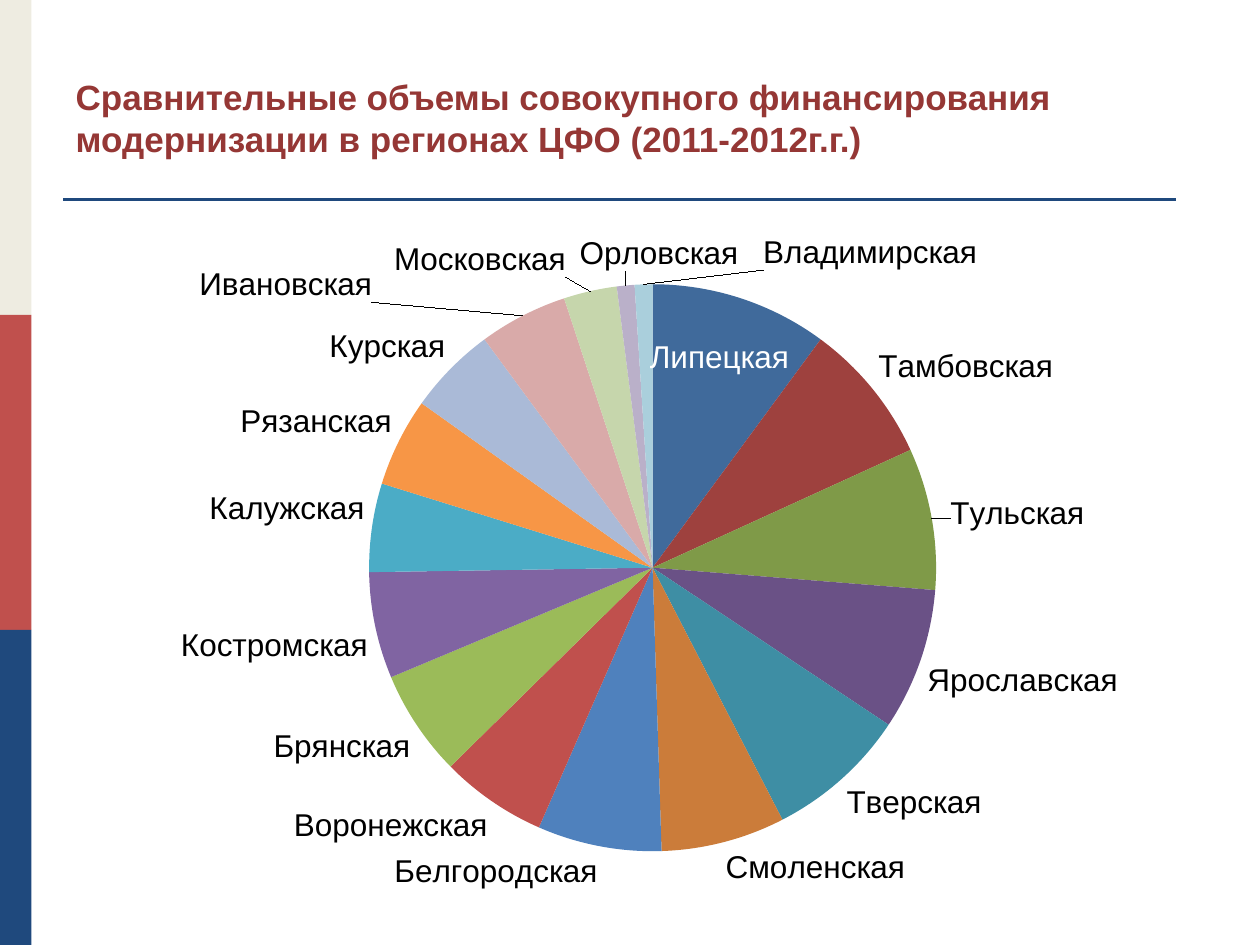
from dataclasses import dataclass
from typing import NamedTuple

from lxml import etree
from pptx import Presentation
from pptx.chart.data import CategoryChartData
from pptx.dml.color import RGBColor
from pptx.enum.chart import XL_CHART_TYPE, XL_LABEL_POSITION
from pptx.enum.shapes import MSO_CONNECTOR, MSO_SHAPE
from pptx.enum.text import MSO_ANCHOR, MSO_AUTO_SIZE, PP_ALIGN
from pptx.oxml.ns import qn
from pptx.util import Pt

PIE = XL_CHART_TYPE.PIE
OUTSIDE_END = XL_LABEL_POSITION.OUTSIDE_END
CENTER = XL_LABEL_POSITION.CENTER
STRAIGHT = MSO_CONNECTOR.STRAIGHT
RECTANGLE = MSO_SHAPE.RECTANGLE
BOTTOM = MSO_ANCHOR.BOTTOM
NO_AUTOFIT = MSO_AUTO_SIZE.NONE
LEFT = PP_ALIGN.LEFT
TITLE_ONLY = 5


@dataclass(frozen=True)
class Theme:
    font: str = "Arial"
    title_size: float = 20
    label_size: float = 18
    title: str = "953735"
    label: str = "000000"
    inside_label: str = "FFFFFF"
    rule: str = "1F497D"
    bands: tuple[str, ...] = ("EEECE1", "C0504D", "1F497D")


class Region(NamedTuple):
    name: str
    value: int
    color: str


class LabelShift(NamedTuple):
    x: float
    y: float


THEME = Theme()
TITLE = (
    "Сравнительные объемы совокупного финансирования "
    "модернизации в регионах ЦФО (2011-2012г.г.)"
)
REGIONS = (
    Region("Липецкая", 10, "406A9B"),
    Region("Тамбовская", 8, "9E413E"),
    Region("Тульская", 8, "7F9A48"),
    Region("Ярославская", 8, "6A5186"),
    Region("Тверская", 8, "3E8EA4"),
    Region("Смоленская", 7, "CB7C3A"),
    Region("Белгородская", 7, "4F81BD"),
    Region("Воронежская", 6, "C0504D"),
    Region("Брянская", 6, "9BBB59"),
    Region("Костромская", 6, "8064A2"),
    Region("Калужская", 5, "4BACC6"),
    Region("Рязанская", 5, "F79646"),
    Region("Курская", 5, "AABAD7"),
    Region("Ивановская", 5, "D9AAA9"),
    Region("Московская", 3, "C6D6AC"),
    Region("Орловская", 1, "BAB0C9"),
    Region("Владимирская", 1, "AACFDC"),
)
INSIDE_REGION = "Липецкая"
LABEL_SHIFTS = {
    "Липецкая": LabelShift(0.02, -0.11),
    "Тульская": LabelShift(0.01, 0.02),
    "Ивановская": LabelShift(-0.13, -0.01),
    "Московская": LabelShift(-0.02, -0.01),
    "Орловская": LabelShift(0.1, -0.01),
    "Владимирская": LabelShift(0.2, -0.01),
}


def rgb(color: str) -> RGBColor:
    return RGBColor.from_string(color)


def draw_bands(slide, height: float) -> None:
    band_height = height / len(THEME.bands)
    for index, color in enumerate(THEME.bands):
        band = slide.shapes.add_shape(
            RECTANGLE, Pt(0), Pt(index * band_height), Pt(18), Pt(band_height)
        )
        band.shadow.inherit = False
        band.fill.solid()
        band.fill.fore_color.rgb = rgb(color)
        band.line.fill.background()


def draw_rule(slide) -> None:
    rule = slide.shapes.add_connector(STRAIGHT, Pt(36), Pt(114), Pt(672), Pt(114))
    rule.line.color.rgb = rgb(THEME.rule)
    rule.line.width = Pt(1.5)
    properties = rule._element.find(qn("p:spPr"))
    etree.SubElement(properties, qn("a:effectLst"))


def format_title(slide) -> None:
    title = slide.shapes.title
    title.left, title.top = Pt(36), Pt(21.6)
    title.width, title.height = Pt(648), Pt(73.4)
    frame = title.text_frame
    frame.text = TITLE
    frame.word_wrap = True
    frame.auto_size = NO_AUTOFIT
    frame.vertical_anchor = BOTTOM
    paragraph = frame.paragraphs[0]
    paragraph.alignment = LEFT
    font = paragraph.runs[0].font
    font.name = THEME.font
    font.size = Pt(THEME.title_size)
    font.bold = True
    font.color.rgb = rgb(THEME.title)


def manual_layout(settings: dict[str, str | float]):
    layout = etree.Element(qn("c:layout"))
    manual = etree.SubElement(layout, qn("c:manualLayout"))
    for name, value in settings.items():
        etree.SubElement(manual, qn(f"c:{name}")).set("val", str(value))
    return layout


def place_plot(chart) -> None:
    plot_area = chart._chartSpace.find(".//" + qn("c:plotArea"))
    for layout in plot_area.findall(qn("c:layout")):
        plot_area.remove(layout)
    settings = {
        "layoutTarget": "inner", "xMode": "edge", "yMode": "edge",
        "x": 0.27, "y": 0.09, "w": 0.5, "h": 0.83,
    }
    plot_area.insert(0, manual_layout(settings))


def format_label(series, index: int, region: Region) -> None:
    inside = region.name == INSIDE_REGION
    label = series.points[index].data_label
    label.position = CENTER if inside else OUTSIDE_END
    label.font.name = THEME.font
    label.font.size = Pt(THEME.label_size)
    label.font.color.rgb = rgb(THEME.inside_label if inside else THEME.label)
    shift = LABEL_SHIFTS[region.name]
    for element in series._element.iter(qn("c:dLbl")):
        identifier = element.find(qn("c:idx"))
        if identifier.get("val") == str(index):
            element.find(qn("c:showVal")).set("val", "0")
            element.find(qn("c:showCatName")).set("val", "1")
            identifier.addnext(manual_layout({"x": shift.x, "y": shift.y}))


def draw_pie(slide) -> None:
    data = CategoryChartData()
    data.categories = [region.name for region in REGIONS]
    data.add_series("Series 1", [region.value for region in REGIONS])
    chart = slide.shapes.add_chart(
        PIE, Pt(36), Pt(126), Pt(648), Pt(393), data
    ).chart
    chart.has_legend = False
    chart.has_title = False
    chart.font.name = THEME.font
    chart.font.size = Pt(THEME.label_size)
    chart.font.color.rgb = rgb(THEME.label)
    place_plot(chart)
    plot = chart.plots[0]
    plot.vary_by_categories = True
    series = plot.series[0]
    labels = series.data_labels
    labels.show_value = False
    labels.show_category_name = True
    labels.position = OUTSIDE_END
    for index, region in enumerate(REGIONS):
        slice_format = series.points[index].format
        slice_format.fill.solid()
        slice_format.fill.fore_color.rgb = rgb(region.color)
        slice_format.line.fill.background()
        if region.name in LABEL_SHIFTS:
            format_label(series, index, region)


def main() -> None:
    presentation = Presentation()
    presentation.slide_width = Pt(720)
    presentation.slide_height = Pt(540)
    slide = presentation.slides.add_slide(presentation.slide_layouts[TITLE_ONLY])
    draw_bands(slide, 540)
    draw_rule(slide)
    format_title(slide)
    draw_pie(slide)
    presentation.save("out.pptx")


if __name__ == "__main__":
    main()
